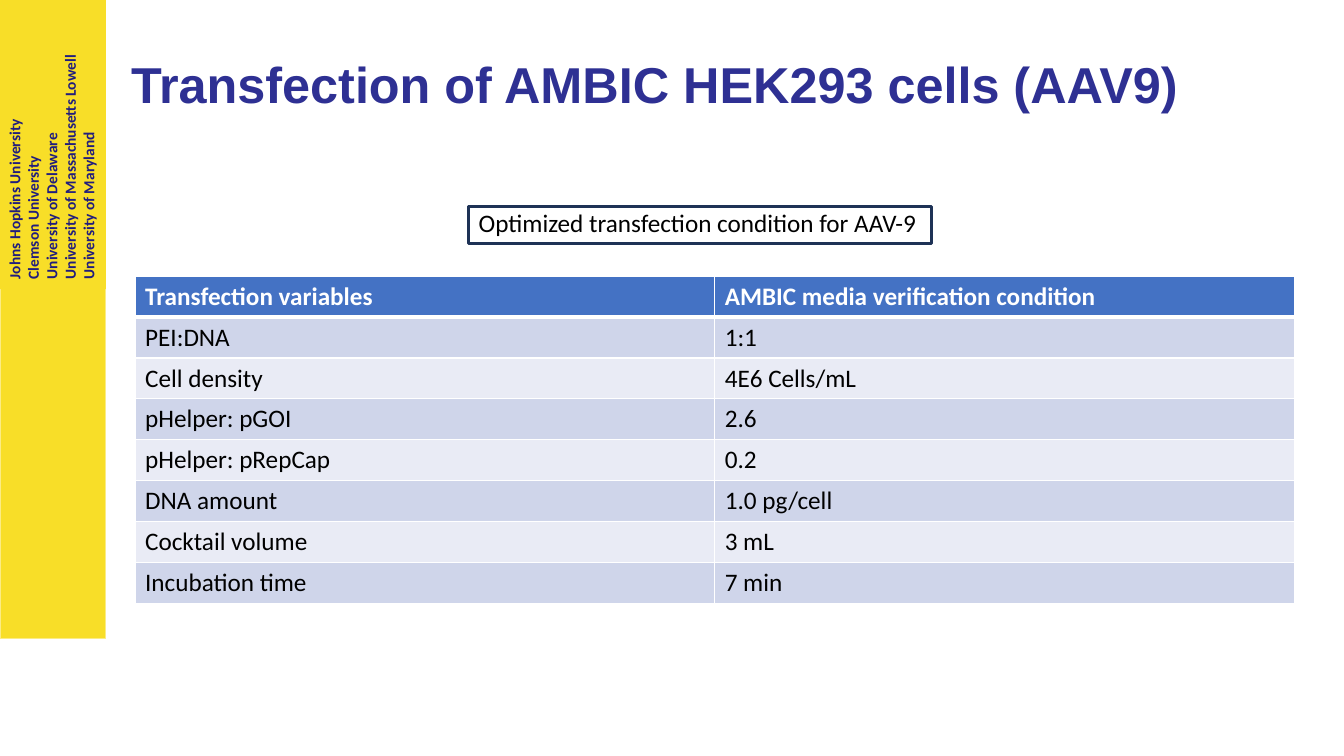
from dataclasses import dataclass

from lxml.etree import SubElement
from pptx import Presentation
from pptx.dml.color import RGBColor
from pptx.enum.shapes import MSO_SHAPE
from pptx.enum.text import MSO_ANCHOR, PP_ALIGN
from pptx.oxml import parse_xml
from pptx.oxml.ns import nsdecls
from pptx.slide import Slide
from pptx.table import _Cell
from pptx.text.text import TextFrame
from pptx.util import Pt

WHITE = RGBColor(0xFF, 0xFF, 0xFF)
BLACK = RGBColor(0x00, 0x00, 0x00)
YELLOW = RGBColor(0xF8, 0xDE, 0x28)
PALE_YELLOW = RGBColor(0xFB, 0xEC, 0x85)
NAVY = RGBColor(0x21, 0x1D, 0x7D)
TITLE_BLUE = RGBColor(0x2E, 0x30, 0x93)
FRAME_BLUE = RGBColor(0x1E, 0x32, 0x56)
HEADER_BLUE = RGBColor(0x44, 0x72, 0xC4)
BAND_DARK = RGBColor(0xCF, 0xD5, 0xEA)
BAND_LIGHT = RGBColor(0xE9, 0xEB, 0xF5)

SIDEBAR_WIDTH = 75.6
MEMBERS_LENGTH = 206.6
ROW_HEIGHT = 29.2
COLUMN_WIDTH = 414

MEMBERS = [
    "Johns Hopkins University",
    "Clemson University",
    "University of Delaware",
    "University of Massachusetts Lowell",
    "University of Maryland",
]
CONDITIONS = [
    ("Transfection variables", "AMBIC media verification condition"),
    ("PEI:DNA", "1:1"),
    ("Cell density", "4E6 Cells/mL"),
    ("pHelper: pGOI", "2.6"),
    ("pHelper: pRepCap", "0.2"),
    ("DNA amount", "1.0 pg/cell"),
    ("Cocktail volume", "3 mL"),
    ("Incubation time", "7 min"),
]


@dataclass(frozen=True)
class Box:
    left: float
    top: float
    width: float
    height: float

    def lengths(self) -> tuple[Pt, Pt, Pt, Pt]:
        return Pt(self.left), Pt(self.top), Pt(self.width), Pt(self.height)


@dataclass(frozen=True)
class TextStyle:
    size: float
    color: RGBColor
    bold: bool = False
    font: str = "Calibri"


@dataclass(frozen=True)
class Panel:
    box: Box
    fill: RGBColor | None = None
    line: RGBColor | None = None
    line_width: float = 0
    rotation: float = 0


def write_lines(frame: TextFrame, lines: list[str], style: TextStyle) -> None:
    frame.text = "\n".join(lines)
    for paragraph in frame.paragraphs:
        paragraph.alignment = PP_ALIGN.LEFT
        for run in paragraph.runs:
            run.font.name = style.font
            run.font.size = Pt(style.size)
            run.font.bold = style.bold
            run.font.color.rgb = style.color


def draw_panel(slide: Slide, panel: Panel) -> TextFrame:
    shape = slide.shapes.add_shape(MSO_SHAPE.RECTANGLE, *panel.box.lengths())
    shape.shadow.inherit = False
    shape.rotation = panel.rotation
    if panel.fill is None:
        shape.fill.background()
    else:
        shape.fill.solid()
        shape.fill.fore_color.rgb = panel.fill
    if panel.line is None:
        shape.line.fill.background()
    else:
        shape.line.color.rgb = panel.line
        shape.line.width = Pt(panel.line_width)
    return shape.text_frame


def set_borders(cell: _Cell, top: float, bottom: float) -> None:
    properties = cell._tc.get_or_add_tcPr()
    widths = {"lnL": 1, "lnR": 1, "lnT": top, "lnB": bottom}
    for index, (side, width) in enumerate(widths.items()):
        border = parse_xml(f'<a:{side} {nsdecls("a")} w="{Pt(width)}"><a:solidFill/></a:{side}>')
        color = SubElement(border[0], border[0].tag.replace("solidFill", "srgbClr"))
        color.set("val", str(WHITE))
        properties.insert(index, border)


def draw_conditions(slide: Slide) -> None:
    box = Box(96.5, 197.3, 2 * COLUMN_WIDTH, ROW_HEIGHT * len(CONDITIONS))
    table = slide.shapes.add_table(len(CONDITIONS), 2, *box.lengths()).table
    for column in table.columns:
        column.width = Pt(COLUMN_WIDTH)
    for row_index, condition in enumerate(CONDITIONS):
        table.rows[row_index].height = Pt(ROW_HEIGHT)
        is_header = row_index == 0
        band = BAND_DARK if row_index % 2 else BAND_LIGHT
        style = TextStyle(18, WHITE if is_header else BLACK, bold=is_header)
        for column_index, entry in enumerate(condition):
            cell = table.cell(row_index, column_index)
            cell.fill.solid()
            cell.fill.fore_color.rgb = HEADER_BLUE if is_header else band
            write_lines(cell.text_frame, [entry], style)
            set_borders(cell, 3 if row_index == 1 else 1, 3 if is_header else 1)


def main() -> None:
    presentation = Presentation()
    presentation.slide_width, presentation.slide_height = Pt(960), Pt(540)
    slide = presentation.slides.add_slide(presentation.slide_layouts[5])

    # Sidebar with the member universities, read from bottom to top
    draw_panel(slide, Panel(Box(0, 0, SIDEBAR_WIDTH, 455.8), YELLOW, PALE_YELLOW, 0.75))
    overhang = (MEMBERS_LENGTH - SIDEBAR_WIDTH) / 2
    members_box = Box(-overhang, overhang, MEMBERS_LENGTH, SIDEBAR_WIDTH)
    members = draw_panel(slide, Panel(members_box, YELLOW, rotation=270))
    members.vertical_anchor = MSO_ANCHOR.TOP
    write_lines(members, MEMBERS, TextStyle(11, NAVY, bold=True))

    # Title
    title = slide.shapes.title
    title.left, title.top, title.width, title.height = Box(86.4, 28.8, 828, 67).lengths()
    title.text_frame.vertical_anchor = MSO_ANCHOR.MIDDLE
    write_lines(
        title.text_frame,
        ["Transfection of AMBIC HEK293 cells (AAV9)"],
        TextStyle(36, TITLE_BLUE, bold=True, font="Arial"),
    )
    title.text_frame.paragraphs[0].line_spacing = 0.9

    # Table of conditions
    draw_conditions(slide)

    # Framed caption above the table
    caption = slide.shapes.add_textbox(*Box(334.8, 144.7, 426.2, 29.1).lengths()).text_frame
    caption.word_wrap = True
    write_lines(caption, ["Optimized transfection condition for AAV-9"], TextStyle(18, BLACK))
    draw_panel(slide, Panel(Box(334.8, 147.6, 330.5, 26.6), line=FRAME_BLUE, line_width=2.25))

    presentation.save("out.pptx")


if __name__ == "__main__":
    main()
